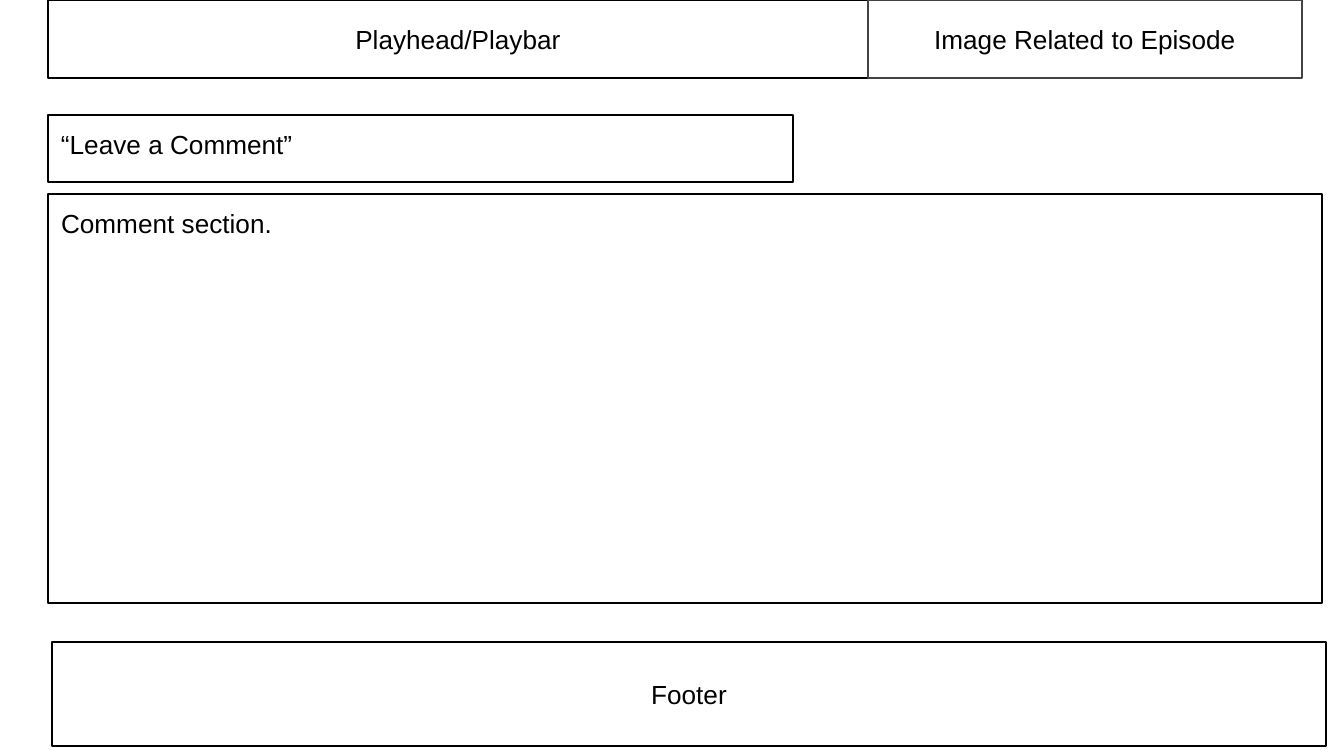
import pptx
from pptx.dml.color import RGBColor
from pptx.enum.shapes import MSO_SHAPE
from pptx.enum.text import MSO_ANCHOR, PP_ALIGN
from pptx.util import Emu, Pt

PX = 914400 / 134.4
SLIDE = (1344, 756)
INSET = 13
COLORS = {"black": "000000", "gray": "434343"}

# text, (left, top, width, height) in px, outline colour, centred
REGIONS = [
    ("Footer", (52, 642, 1274, 104), "black", True),
    ("Comment section.", (48, 194, 1274, 409), "black", False),
    ("Playhead/Playbar", (48, 0, 820, 78), "black", True),
    ("“Leave a Comment”", (48, 115, 745, 67), "black", False),
    ("Image Related to Episode", (868, 0, 434, 78), "gray", True),
]


def px(length):
    return Emu(round(length * PX))


def color(name):
    return RGBColor.from_string(COLORS[name])


def add_region(page, text, bounds, outline, centred):
    box = page.shapes.add_shape(MSO_SHAPE.RECTANGLE, *map(px, bounds))
    box.shadow.inherit = False
    box.fill.background()
    box.line.color.rgb = color(outline)
    box.line.width = Pt(0.75)

    frame = box.text_frame
    frame.word_wrap = True
    frame.margin_left = frame.margin_right = px(INSET)
    frame.margin_top = frame.margin_bottom = px(INSET)
    frame.vertical_anchor = MSO_ANCHOR.MIDDLE if centred else MSO_ANCHOR.TOP
    frame.text = text

    para = frame.paragraphs[0]
    para.alignment = PP_ALIGN.CENTER if centred else PP_ALIGN.LEFT
    span = para.runs[0]
    span.font.name = "Arial"
    span.font.size = Pt(14)
    span.font.color.rgb = color("black")


def main():
    deck = pptx.Presentation()
    deck.slide_width, deck.slide_height = map(px, SLIDE)
    page = deck.slides.add_slide(deck.slide_layouts[6])
    for region in REGIONS:
        add_region(page, *region)
    deck.save("out.pptx")


if __name__ == "__main__":
    main()
